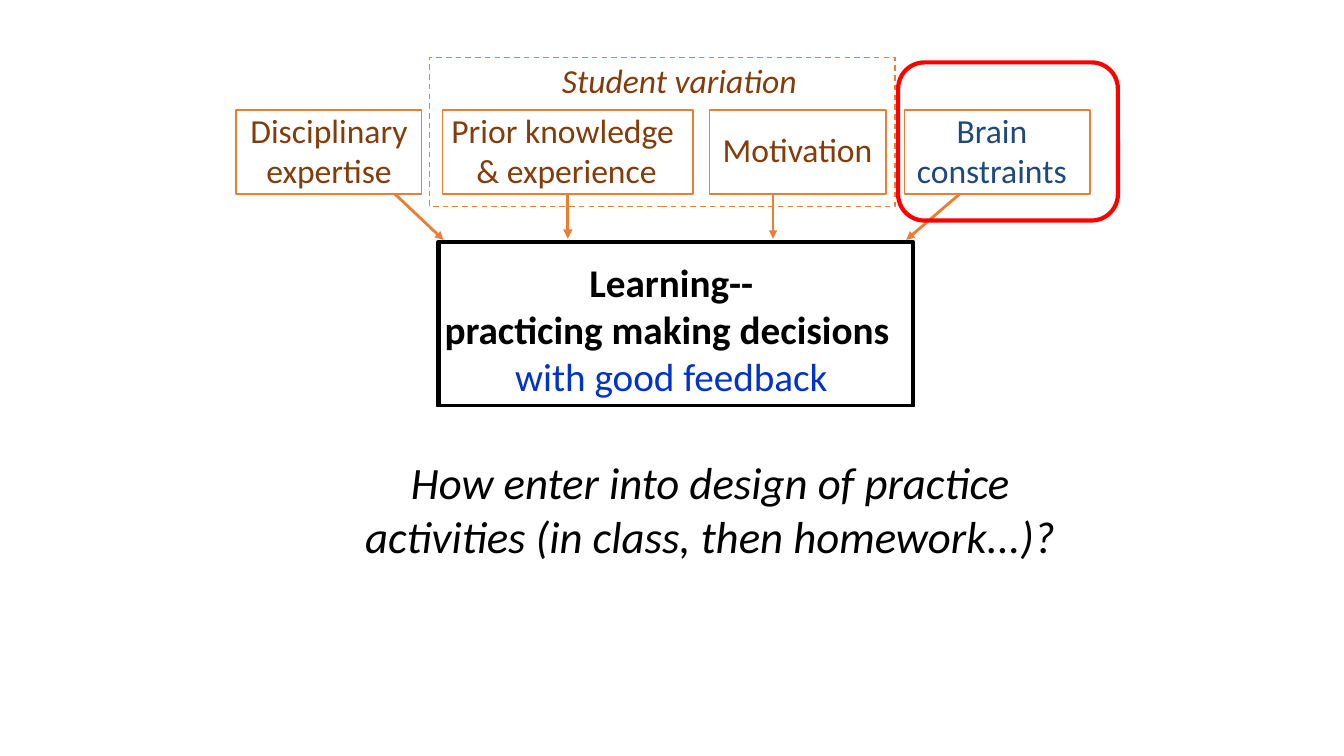
from lxml import etree
from pptx import Presentation
from pptx.dml.color import RGBColor
from pptx.enum.dml import MSO_LINE
from pptx.enum.shapes import MSO_CONNECTOR, MSO_SHAPE
from pptx.enum.text import MSO_ANCHOR, PP_ALIGN
from pptx.oxml.ns import qn
from pptx.util import Pt

RECT, ROUND = MSO_SHAPE.RECTANGLE, MSO_SHAPE.ROUNDED_RECTANGLE
LINE, DASH = MSO_CONNECTOR.STRAIGHT, MSO_LINE.DASH
CENTER, LEFT = PP_ALIGN.CENTER, PP_ALIGN.LEFT
MIDDLE = MSO_ANCHOR.MIDDLE
FONT = "Calibri"
COLORS = {
    "white": "FFFFFF", "black": "000000", "orange": "ED7D31",
    "brown": "843C0B", "navy": "1F497D", "blue": "0033CC", "red": "FF0000",
}
TOP, HIGH = 78.7, 60
BASE = TOP + HIGH
FACTORS = [
    (168.6, 132.6, ["Disciplinary", "expertise"], (173.5, 74.9, 123.1, 65.5), "brown", CENTER),
    (316.3, 178.6, ["Prior knowledge ", "& experience"], (316.8, 74.9, 175.7, 65.5), "brown", CENTER),
    (507, 126, ["Motivation"], (511.2, 88.6, 118.8, 36), "brown", LEFT),
    (645.9, 132.6, ["Brain", "constraints"], (645.9, 74.9, 125.3, 65.5), "navy", CENTER),
]
ARROWS = [
    (282.2, 316.8, 171.4, 2),
    (405.6, 405.6, 170.6, 2.25),
    (552.2, 552.2, 170.6, 2),
    (685.4, 647.3, 171.4, 2),
]


def color(name):
    """Return the named colour."""
    return RGBColor.from_string(COLORS[name])


def box(slide, area, line, width, fill=None, kind=RECT, dash=None):
    """Add an outlined shape, filled or hollow."""
    shape = slide.shapes.add_shape(kind, *map(Pt, area))
    shape.shadow.inherit = False
    if fill:
        shape.fill.solid()
        shape.fill.fore_color.rgb = color(fill)
    else:
        shape.fill.background()
    shape.line.color.rgb = color(line)
    shape.line.width = Pt(width)
    if dash:
        shape.line.dash_style = dash
    return shape


def write(frame, rows, size, align=CENTER, italic=False):
    """Write one paragraph for each row of text, colour and weight."""
    for i, (text, tint, bold) in enumerate(rows):
        para = frame.add_paragraph() if i else frame.paragraphs[0]
        para.alignment = align
        run = para.add_run()
        run.text = text
        font = run.font
        font.name, font.size = FONT, Pt(size)
        font.bold, font.italic = bold, italic
        font.color.rgb = color(tint)


def label(slide, area, rows, size, inset=5, wrap=False, **style):
    """Add a text box."""
    frame = slide.shapes.add_textbox(*map(Pt, area)).text_frame
    frame.word_wrap = wrap
    frame.margin_left = frame.margin_right = Pt(inset)
    frame.margin_top = frame.margin_bottom = Pt(3.6)
    write(frame, rows, size, **style)


def arrow(slide, start, end, width):
    """Add an orange arrow."""
    link = slide.shapes.add_connector(LINE, *map(Pt, (*start, *end)))
    link.line.color.rgb = color("orange")
    link.line.width = Pt(width)
    etree.SubElement(link.line._get_or_add_ln(), qn("a:tailEnd"), type="triangle")
    etree.SubElement(link._element.spPr, qn("a:effectLst"))
    return link


def main():
    """Build the slide on factors that shape learning."""
    deck = Presentation()
    deck.slide_width, deck.slide_height = Pt(960), Pt(540)
    slide = deck.slides.add_slide(deck.slide_layouts[6])

    box(slide, (313.2, 172.8, 339.1, 117.4), "black", 3, "white")
    cards = []
    for left, width, words, area, tint, align in FACTORS:
        cards.append(box(slide, (left, TOP, width, HIGH), "orange", 1))
        rows = [(word, tint, False) for word in words]
        label(slide, area, rows, 24, align=align, wrap=tint == "navy")
    links = [arrow(slide, (x, BASE), (to, end), width) for x, to, end, width in ARROWS]
    links[1].begin_connect(cards[1], 2)

    box(slide, (306.7, 41, 332.6, 106.6), "orange", 1, dash=DASH)
    label(slide, (395.3, 39.6, 180, 36), [("Student variation", "brown", False)], 24, italic=True)

    ask = box(slide, (152.6, 291.6, 709.9, 143.3), "white", 2, "white")
    ask.text_frame.vertical_anchor = MIDDLE
    write(ask.text_frame, [
        ("How enter into design of practice", "black", False),
        ("activities (in class, then homework...)?", "black", False),
    ], 32, italic=True)

    box(slide, (641.5, 44.6, 157, 113), "red", 3, kind=ROUND)
    label(slide, (299.5, 180.7, 360, 108.7), [
        ("Learning--", "black", True),
        ("practicing making decisions ", "black", True),
        ("with good feedback", "blue", False),
    ], 28, inset=7.2, wrap=True)
    deck.save("out.pptx")


if __name__ == "__main__":
    main()
